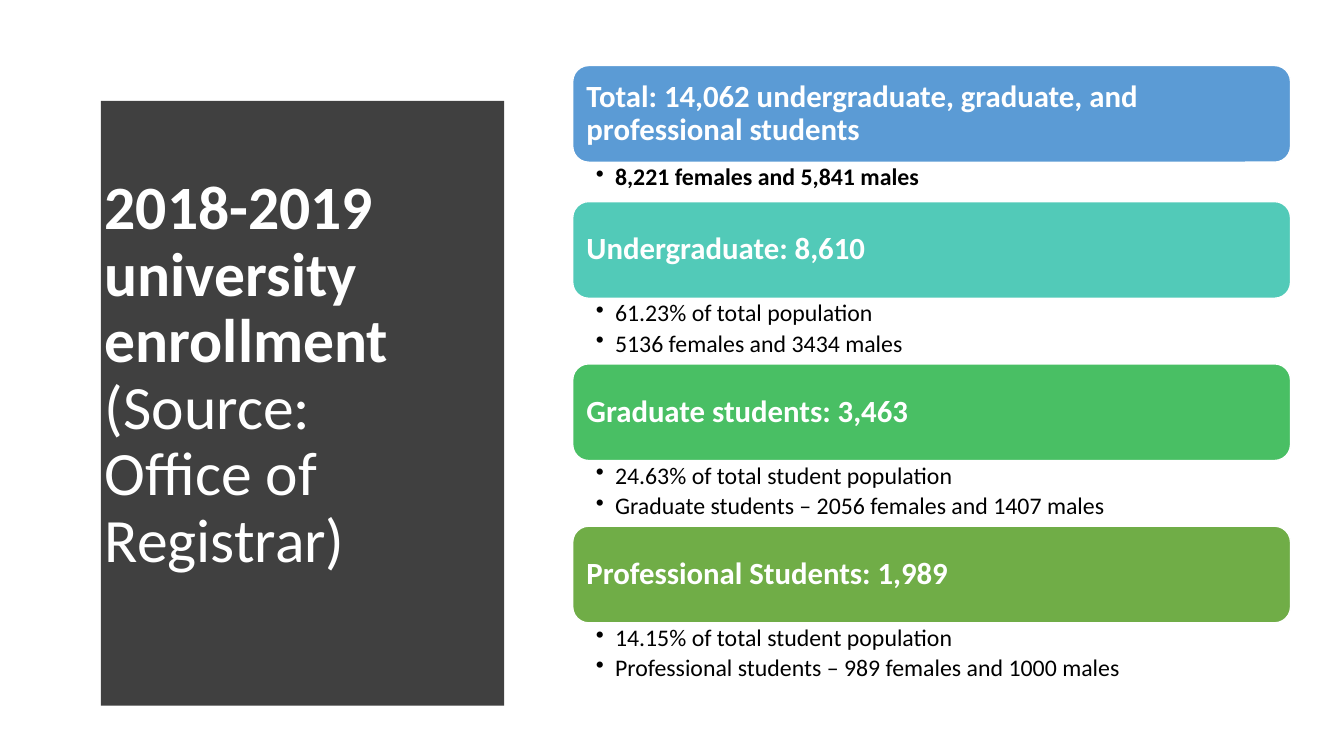
"""Build the 2018-2019 university enrollment slide."""
from lxml import etree
from pptx import Presentation, util as u
from pptx.dml.color import RGBColor
from pptx.enum import shapes, text
from pptx.oxml.ns import qn

TITLE = [("2018-2019 university enrollment ", True),
         ("(Source: Office of Registrar)", False)]
GROUPS = [
    ("Total: 14,062 undergraduate, graduate, and professional students", "5B9BD5",
     ["8,221 females and 5,841 males"], True),
    ("Undergraduate: 8,610", "52CAB8",
     ["61.23% of total population", "5136 females and 3434 males"], False),
    ("Graduate students: 3,463", "49BF64",
     ["24.63% of total student population",
      "Graduate students – 2056 females and 1407 males"], False),
    ("Professional Students: 1,989", "70AD47",
     ["14.15% of total student population",
      "Professional students – 989 females and 1000 males"], False),
]
THEME = dict(font="Calibri", panel="404040", light="FFFFFF", dark="000000",
             title=44, header=22, bullet=17)

LEFT, WIDTH, TOP = 5.68, 7.12, 0.65
HEADER_H = 0.96
DETAIL_H = {1: 0.39, 2: 0.65}
PANEL_L, PANEL_T, PANEL_B, PANEL_R, BULGE = 0.53, 0.52, 6.96, 5.08, 0.24
STEPS = 40


def color(name):
    return RGBColor.from_string(THEME.get(name, name))


def style(p, size, ink, bold=None):
    p.line_spacing = 0.9
    p.alignment = text.PP_ALIGN.LEFT
    f = p.font
    f.name, f.size, f.bold = THEME["font"], u.Pt(THEME[size]), bold
    f.color.rgb = color(ink)


def frame(sp, anchor, insets):
    tf = sp.text_frame
    tf.word_wrap = True
    tf.vertical_anchor = anchor
    (tf.margin_left, tf.margin_top,
     tf.margin_right, tf.margin_bottom) = map(u.Inches, insets)
    return tf


def add_panel(s):
    edge = []
    for i in range(STEPS + 1):
        t = i / STEPS
        x = PANEL_R + BULGE * (1 - (2 * t - 1) ** 2)
        edge.append((x, PANEL_T + t * (PANEL_B - PANEL_T)))
    fb = s.shapes.build_freeform(PANEL_L, PANEL_T, scale=u.Inches(1))
    fb.add_line_segments(edge + [(PANEL_L, PANEL_B)], close=True)
    sp = fb.convert_to_shape()
    sp.shadow.inherit = False
    sp.fill.solid()
    sp.fill.fore_color.rgb = color("panel")
    sp.line.fill.background()


def add_title(s):
    sp = s.shapes.add_textbox(*map(u.Inches, (0.94, 1.11, 3.74, 5.24)))
    tf = frame(sp, text.MSO_ANCHOR.MIDDLE, (0.1, 0.05, 0.1, 0.05))
    p = tf.paragraphs[0]
    style(p, "title", "light")
    for words, bold in TITLE:
        r = p.add_run()
        r.text, r.font.bold = words, bold


def add_header(s, top, words, fill):
    sp = s.shapes.add_shape(shapes.MSO_SHAPE.ROUNDED_RECTANGLE,
                            *map(u.Inches, (LEFT, top, WIDTH, HEADER_H)))
    sp.shadow.inherit = False
    sp.fill.solid()
    sp.fill.fore_color.rgb = color(fill)
    sp.line.color.rgb = color("light")
    sp.line.width = u.Pt(1)
    p = frame(sp, text.MSO_ANCHOR.MIDDLE, (0.09,) * 4).paragraphs[0]
    p.text = words
    style(p, "header", "light", True)


def add_details(s, top, height, items, bold):
    sp = s.shapes.add_textbox(*map(u.Inches, (LEFT, top, WIDTH, height)))
    tf = frame(sp, text.MSO_ANCHOR.TOP, (0.23, 0.03, 0.17, 0.03))
    for i, item in enumerate(items):
        p = tf.add_paragraph() if i else tf.paragraphs[0]
        p.text = item
        style(p, "bullet", "dark", bold)
        p.space_after = u.Pt(3.4)
        pPr = p._p.get_or_add_pPr()
        pPr.set("marL", str(u.Inches(0.19)))
        pPr.set("indent", str(-u.Inches(0.19)))
        bullet = etree.Element(qn("a:buChar"), char="•")
        pPr.find(qn("a:defRPr")).addprevious(bullet)


def main():
    prs = Presentation()
    prs.slide_width, prs.slide_height = u.Inches(13.33), u.Inches(7.5)
    s = prs.slides.add_slide(prs.slide_layouts[6])
    add_panel(s)
    add_title(s)
    top = TOP
    for header, fill, items, bold in GROUPS:
        height = DETAIL_H[len(items)]
        add_header(s, top, header, fill)
        add_details(s, top + HEADER_H, height, items, bold)
        top += HEADER_H + height
    prs.save("out.pptx")


if __name__ == "__main__":
    main()
